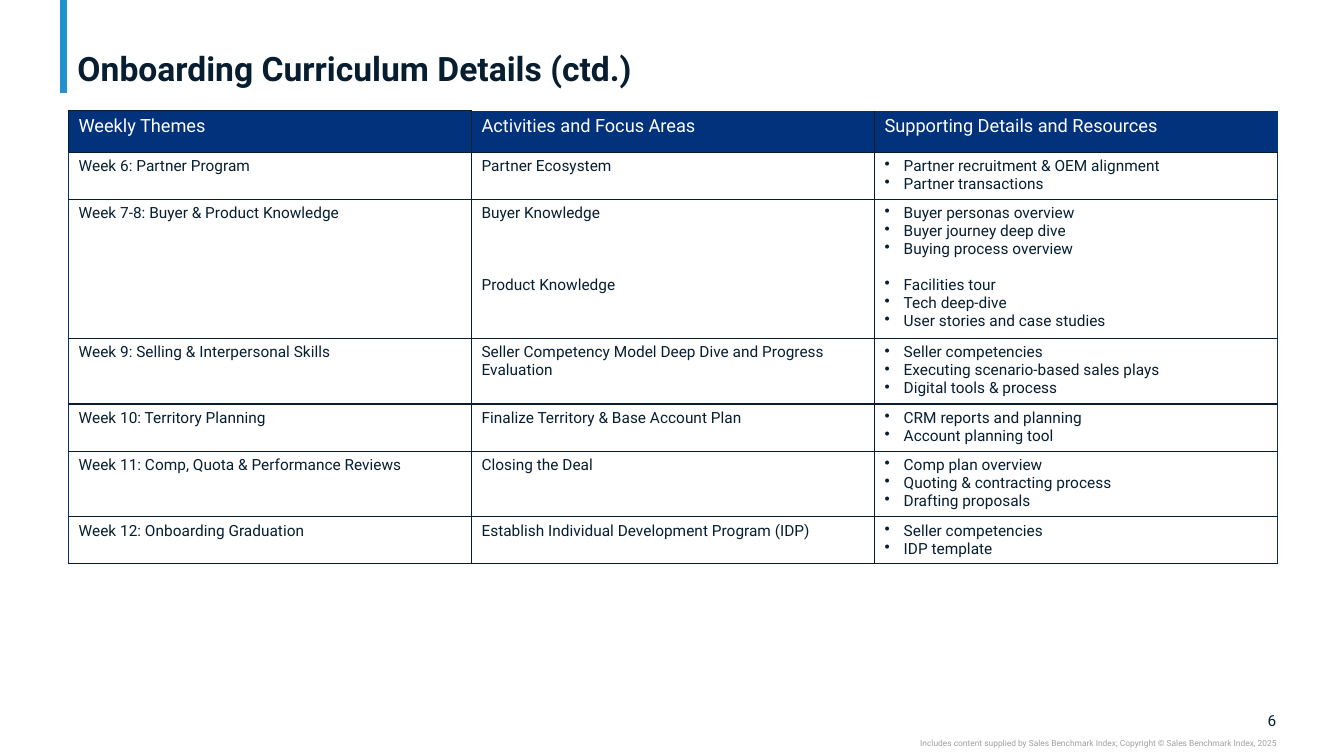
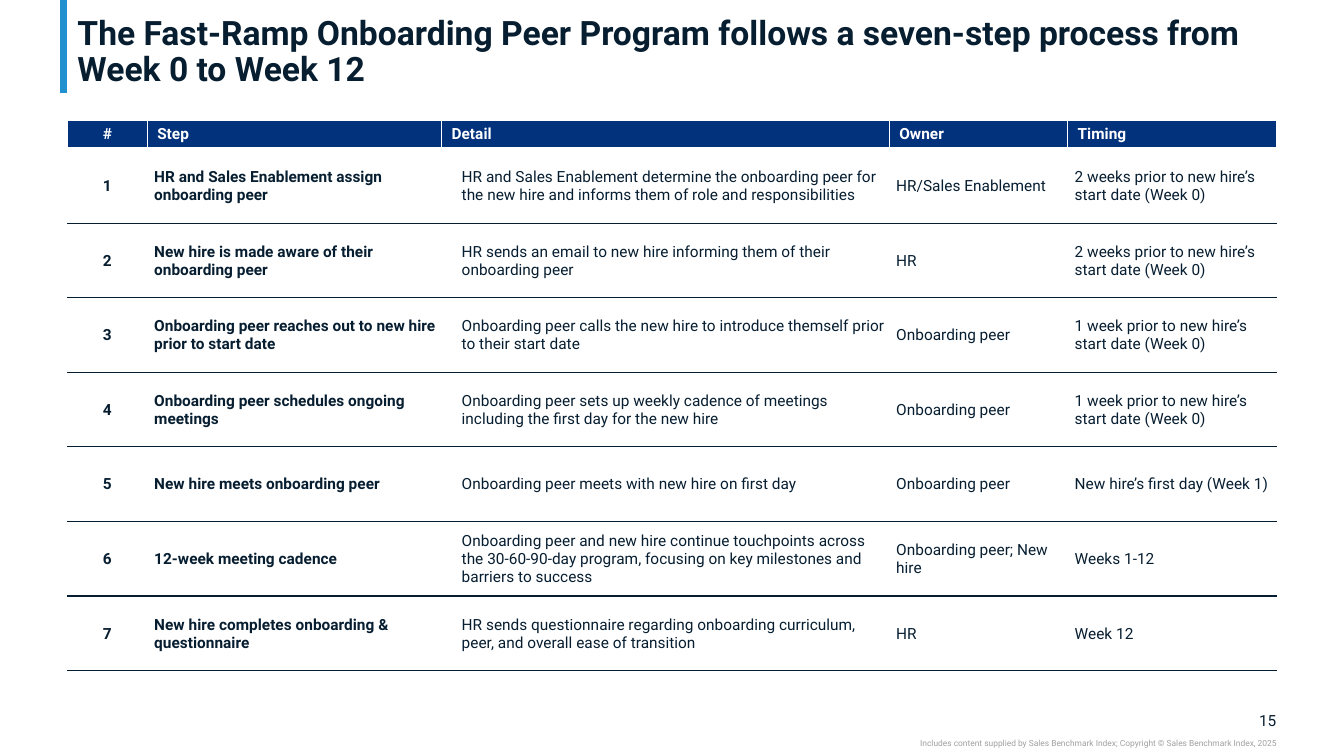
from lxml import etree
from pptx import Presentation
from pptx.dml.color import RGBColor
from pptx.enum.shapes import MSO_CONNECTOR
from pptx.enum.text import MSO_ANCHOR, PP_ALIGN
from pptx.oxml.ns import qn
from pptx.util import Inches, Pt

TOP, MIDDLE, BOTTOM = MSO_ANCHOR.TOP, MSO_ANCHOR.MIDDLE, MSO_ANCHOR.BOTTOM
LEFT, CENTER, RIGHT = PP_ALIGN.LEFT, PP_ALIGN.CENTER, PP_ALIGN.RIGHT
STRAIGHT = MSO_CONNECTOR.STRAIGHT

FONT = "Roboto"
COLORS = {"ink": "071E31", "navy": "03327C", "accent": "2391CF",
          "muted": "A0A0A0", "white": "FFFFFF"}
SLIDE_W, SLIDE_H = 13.33, 7.5
CONTENT_LEFT, CONTENT_W = 0.67, 11.99
CONTENT_RIGHT = CONTENT_LEFT + CONTENT_W
BODY_SIZE = 11
LINE_H = 12.9 / 72  # height of one line of body text, in inches
CELL_INSETS = (0.1, 0.05, 0.1, 0.05)  # left, top, right, bottom
COPYRIGHT = ("Includes content supplied by Sales Benchmark Index; "
             "Copyright © Sales Benchmark Index, 2025")

CURRICULUM_TITLE = "Onboarding Curriculum Details (ctd.)"
CURRICULUM_HEADS = ["Weekly Themes", "Activities and Focus Areas",
                    "Supporting Details and Resources"]
# Each week: theme, then (activity, resources) groups
CURRICULUM = [
    ("Week 6: Partner Program", [
        ("Partner Ecosystem",
         ["Partner recruitment & OEM alignment", "Partner transactions"])]),
    ("Week 7-8: Buyer & Product Knowledge", [
        ("Buyer Knowledge",
         ["Buyer personas overview", "Buyer journey deep dive", "Buying process overview"]),
        ("Product Knowledge",
         ["Facilities tour", "Tech deep-dive", "User stories and case studies"])]),
    ("Week 9: Selling & Interpersonal Skills", [
        ("Seller Competency Model Deep Dive and Progress Evaluation",
         ["Seller competencies", "Executing scenario-based sales plays",
          "Digital tools & process"])]),
    ("Week 10: Territory Planning", [
        ("Finalize Territory & Base Account Plan",
         ["CRM reports and planning", "Account planning tool"])]),
    ("Week 11: Comp, Quota & Performance Reviews", [
        ("Closing the Deal",
         ["Comp plan overview", "Quoting & contracting process", "Drafting proposals"])]),
    ("Week 12: Onboarding Graduation", [
        ("Establish Individual Development Program (IDP)",
         ["Seller competencies", "IDP template"])]),
]

PROCESS_TITLE = ("The Fast-Ramp Onboarding Peer Program follows a seven-step process "
                 "from Week 0 to Week 12")
# Each column: heading, width, indent, alignment, bold
PROCESS_COLUMNS = [
    ("#", 0.79, 0, CENTER, True),
    ("Step", 2.92, 0.06, LEFT, True),
    ("Detail", 4.44, 0.19, LEFT, False),
    ("Owner", 1.77, 0.06, LEFT, False),
    ("Timing", 2.07, 0.06, LEFT, False),
]
STEPS = [
    ("HR and Sales Enablement assign onboarding peer",
     "HR and Sales Enablement determine the onboarding peer for the new hire "
     "and informs them of role and responsibilities",
     "HR/Sales Enablement", "2 weeks prior to new hire’s start date (Week 0)"),
    ("New hire is made aware of their onboarding peer",
     "HR sends an email to new hire informing them of their onboarding peer",
     "HR", "2 weeks prior to new hire’s start date (Week 0)"),
    ("Onboarding peer reaches out to new hire prior to start date",
     "Onboarding peer calls the new hire to introduce themself prior to their start date",
     "Onboarding peer", "1 week prior to new hire’s start date (Week 0)"),
    ("Onboarding peer schedules ongoing meetings",
     "Onboarding peer sets up weekly cadence of meetings including the first day "
     "for the new hire",
     "Onboarding peer", "1 week prior to new hire’s start date (Week 0)"),
    ("New hire meets onboarding peer",
     "Onboarding peer meets with new hire on first day",
     "Onboarding peer", "New hire’s first day (Week 1)"),
    ("12-week meeting cadence",
     "Onboarding peer and new hire continue touchpoints across the 30-60-90-day "
     "program, focusing on key milestones and barriers to success",
     "Onboarding peer; New hire", "Weeks 1-12"),
    ("New hire completes onboarding & questionnaire",
     "HR sends questionnaire regarding onboarding curriculum, peer, and overall "
     "ease of transition",
     "HR", "Week 12"),
]


def rgb(name):
    return RGBColor.from_string(COLORS[name])


def set_insets(target, insets):
    target.margin_left, target.margin_top, target.margin_right, target.margin_bottom = (
        Inches(inset) for inset in insets)


def write(paragraph, text, size=BODY_SIZE, color="ink", bold=False, align=LEFT):
    paragraph.alignment = align
    run = paragraph.add_run()
    run.text = text
    run.font.name, run.font.size, run.font.bold = FONT, Pt(size), bold
    run.font.color.rgb = rgb(color)


def indent(paragraph, left, hanging=0.0, bullet=None):
    props = paragraph._p.get_or_add_pPr()
    props.set("marL", str(Inches(left)))
    props.set("indent", str(-Inches(hanging)))
    if bullet:
        etree.SubElement(props, qn("a:buChar"), char=bullet)


def add_label(slide, text, left, top, width, height, anchor=TOP, side=0, **style):
    frame = slide.shapes.add_textbox(*map(Inches, (left, top, width, height))).text_frame
    frame.word_wrap = True
    frame.vertical_anchor = anchor
    set_insets(frame, (side, 0, side, 0))
    write(frame.paragraphs[0], text, **style)
    return frame.paragraphs[0]


def add_framed_slide(deck, title, number):
    """Add a slide with the accent band, title, page number and copyright line."""
    slide = deck.slides.add_slide(deck.slide_layouts[6])
    band = slide.shapes.add_connector(STRAIGHT, Inches(0.63), 0, Inches(0.63), Inches(0.92))
    band.line.color.rgb = rgb("accent")
    band.line.width = Pt(5)
    etree.SubElement(band._element.spPr, qn("a:effectLst"))
    heading = add_label(slide, title, CONTENT_LEFT, 0.04, CONTENT_W, 0.84,
                        anchor=BOTTOM, side=0.1, size=24, bold=True)
    heading.line_spacing = 0.9
    add_label(slide, str(number), CONTENT_RIGHT - 0.33, 7.05, 0.33, 0.19,
              anchor=MIDDLE, align=RIGHT)
    add_label(slide, COPYRIGHT, CONTENT_RIGHT - 5.16, 7.32, 5.16, 0.1,
              size=6, color="muted", align=RIGHT)
    return slide


def add_grid(slide, left, top, widths, heights):
    frame = slide.shapes.add_table(len(heights), len(widths), Inches(left), Inches(top),
                                   Inches(sum(widths)), Inches(sum(heights)))
    table = frame.table
    table.first_row = table.horz_banding = False
    for column, width in zip(table.columns, widths):
        column.width = Inches(width)
    for row, height in zip(table.rows, heights):
        row.height = Inches(height)
    return table


def format_cell(cell, borders, fill=None, anchor=TOP, insets=CELL_INSETS):
    """Set borders, given as (colour, points) for left, right, top and bottom, then the rest."""
    props = cell._tc.get_or_add_tcPr()
    for side, (color, points) in zip("LRTB", borders):
        line = etree.SubElement(props, qn(f"a:ln{side}"), w=str(Pt(points)))
        solid = etree.SubElement(line, qn("a:solidFill"))
        etree.SubElement(solid, qn("a:srgbClr"), val=COLORS[color])
    if fill:
        cell.fill.solid()
        cell.fill.fore_color.rgb = rgb(fill)
    else:
        cell.fill.background()
    cell.vertical_anchor = anchor
    set_insets(cell, insets)


def write_groups(cell, groups, gaps, bullet=None):
    """Write groups of lines, each group after the first set apart by its gap in lines."""
    frame = cell.text_frame
    first = True
    for group, gap in zip(groups, gaps):
        for position, text in enumerate(group):
            paragraph = frame.paragraphs[0] if first else frame.add_paragraph()
            if bullet:
                indent(paragraph, 0.19, 0.19, bullet)
            if position == 0 and not first:
                paragraph.space_before = Pt(round(gap * LINE_H * 72, 1))
            write(paragraph, text)
            first = False


def build_curriculum(deck):
    slide = add_framed_slide(deck, CURRICULUM_TITLE, 6)
    line_counts = [sum(len(resources) + 1 for _, resources in groups) - 1
                   for _, groups in CURRICULUM]
    heights = [0.41] + [count * LINE_H + 0.1 for count in line_counts]
    columns = len(CURRICULUM_HEADS)
    table = add_grid(slide, 0.68, 1.1, [CONTENT_W / columns] * columns, heights)

    inner, outer = ("ink", 1), ("navy", 0.5)
    for r in range(len(heights)):
        for c in range(columns):
            borders = (outer if c == 0 and r else inner,
                       outer if c == columns - 1 else inner,
                       outer if r == 0 and c else inner,
                       inner)
            format_cell(table.cell(r, c), borders, fill=None if r else "navy")

    for c, head in enumerate(CURRICULUM_HEADS):
        write(table.cell(0, c).text_frame.paragraphs[0], head, size=13, color="white")
    for r, (theme, groups) in enumerate(CURRICULUM, 1):
        write_groups(table.cell(r, 0), [[theme]], [0])
        # An activity starts level with the first of its resources
        activity_gaps = [0] + [len(resources) for _, resources in groups]
        write_groups(table.cell(r, 1), [[activity] for activity, _ in groups], activity_gaps)
        write_groups(table.cell(r, 2), [resources for _, resources in groups],
                     [1] * len(groups), bullet="•")


def build_process(deck):
    slide = add_framed_slide(deck, PROCESS_TITLE, 15)
    widths = [column[1] for column in PROCESS_COLUMNS]
    table = add_grid(slide, CONTENT_LEFT, 1.19, widths, [0.28] + [0.74] * len(STEPS))

    gap, header_rule, rule = ("white", 1), ("white", 3), ("ink", 1)
    for c, (head, _, left, align, bold) in enumerate(PROCESS_COLUMNS):
        header = table.cell(0, c)
        format_cell(header, (gap, gap, gap, header_rule), fill="navy", anchor=MIDDLE)
        write(header.text_frame.paragraphs[0], head, color="white", bold=True, align=align)
        for r, step in enumerate(STEPS, 1):
            cell = table.cell(r, c)
            format_cell(cell, (gap, gap, header_rule if r == 1 else rule, rule),
                        anchor=MIDDLE, insets=(0.01, 0.01, 0.01, 0))
            paragraph = cell.text_frame.paragraphs[0]
            indent(paragraph, left)
            write(paragraph, (str(r), *step)[c], bold=bold, align=align)


def main():
    deck = Presentation()
    deck.slide_width, deck.slide_height = Inches(SLIDE_W), Inches(SLIDE_H)
    build_curriculum(deck)
    build_process(deck)
    deck.save("out.pptx")


if __name__ == "__main__":
    main()
